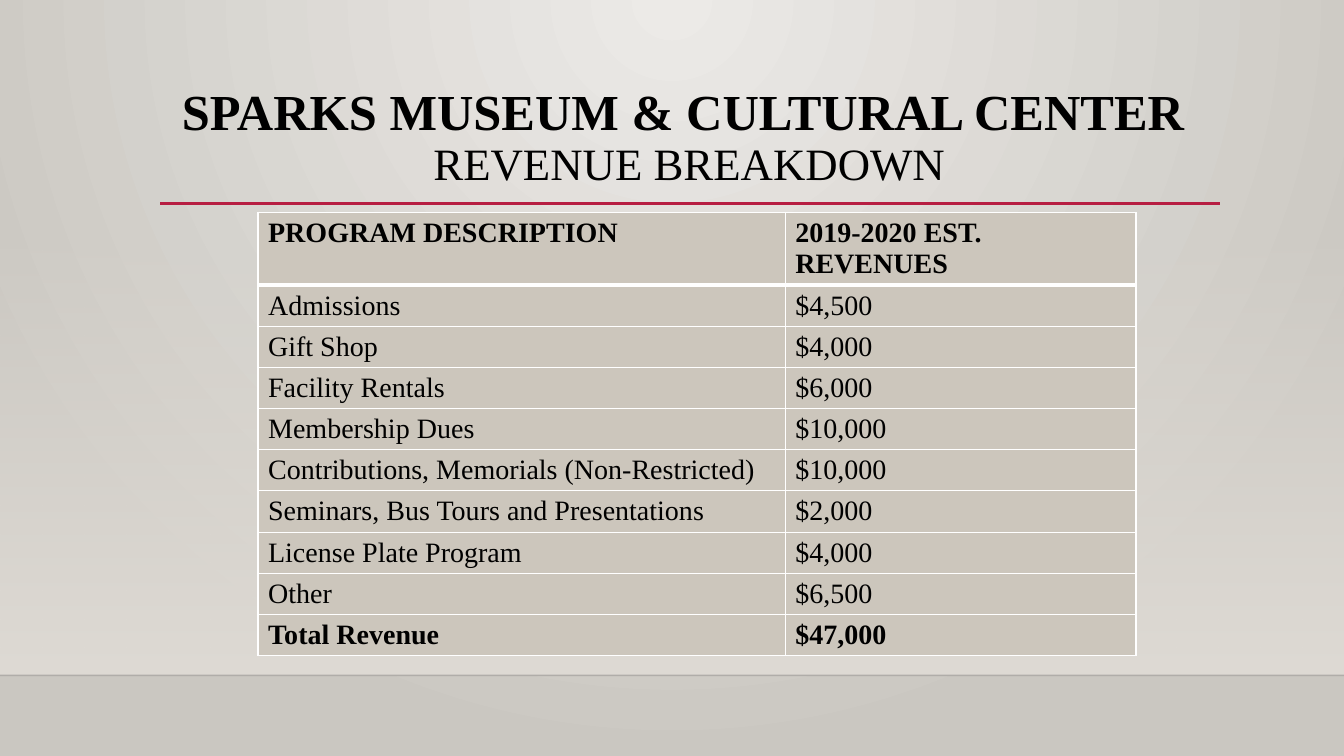
"""Builds the revenue breakdown slide of the museum and cultural center."""
import lxml.etree
import pptx
import pptx.dml.color
import pptx.enum.shapes
import pptx.enum.text
import pptx.oxml.ns
import pptx.util

Pt = pptx.util.Pt
RGBColor = pptx.dml.color.RGBColor
qn = pptx.oxml.ns.qn

BLACK = RGBColor(0x00, 0x00, 0x00)
WHITE = RGBColor(0xFF, 0xFF, 0xFF)
CRIMSON = RGBColor(0xB7, 0x1E, 0x42)
EDGE = RGBColor(0x00, 0x00, 0x01)
GLOW = RGBColor(0xEC, 0xEA, 0xE7)
STONE = RGBColor(0xCA, 0xC7, 0xC1)
HAZE = RGBColor(0xDF, 0xDB, 0xD5)
CELL = RGBColor(0xCC, 0xC6, 0xBC)
FONT = "Times New Roman"
SLIDE_WIDTH, SLIDE_HEIGHT = Pt(960), Pt(540)
FLOOR_TOP = Pt(482.4)
COLUMN_WIDTHS = (Pt(376.56), Pt(250.56))
HEADER_HEIGHT, ROW_HEIGHT = Pt(51.4), Pt(29.4)

REVENUES = (
    ("PROGRAM DESCRIPTION", "2019-2020 EST. REVENUES"),
    ("Admissions", "$4,500"),
    ("Gift Shop", "$4,000"),
    ("Facility Rentals", "$6,000"),
    ("Membership Dues", "$10,000"),
    ("Contributions, Memorials (Non-Restricted)", "$10,000"),
    ("Seminars, Bus Tours and Presentations", "$2,000"),
    ("License Plate Program", "$4,000"),
    ("Other", "$6,500"),
    ("Total Revenue", "$47,000"),
)


def add_element(parent, tag, **attributes):
    return lxml.etree.SubElement(parent, qn(tag), attributes)


def set_gradient(fill, start, end):
    fill.gradient()
    for stop, color in zip(fill.gradient_stops, (start, end)):
        stop.color.rgb = color


def set_alpha(properties, percent):
    color = next(properties.iter(qn("a:srgbClr")))
    add_element(color, "a:alpha", val=str(percent * 1000))


def paint_background(page):
    set_gradient(page.background.fill, GLOW, STONE)
    gradient = next(page.element.iter(qn("a:gradFill")))
    gradient.remove(gradient.find(qn("a:lin")))
    circle = add_element(gradient, "a:path", path="circle")
    add_element(circle, "a:fillToRect", l="43000", t="0", r="43000", b="100000")


def add_haze(page):
    top = Pt(159.12)
    haze = page.shapes.add_shape(
        pptx.enum.shapes.MSO_SHAPE.RECTANGLE, 0, top, SLIDE_WIDTH, FLOOR_TOP - top)
    haze.shadow.inherit = False
    haze.line.fill.background()
    set_gradient(haze.fill, HAZE, HAZE)
    haze.fill.gradient_angle = 270
    set_alpha(haze.element.spPr, 0)


def add_rule(page, left, right, y, color, width):
    rule = page.shapes.add_connector(
        pptx.enum.shapes.MSO_CONNECTOR.STRAIGHT, left, y, right, y)
    rule.line.color.rgb = color
    rule.line.width = width
    add_element(rule.element.spPr, "a:effectLst")
    return rule


def fill_title(page):
    title = page.shapes.title
    title.left, title.top, title.width, title.height = (
        Pt(114.48), Pt(51.84), Pt(756), Pt(94.32))
    frame = title.text_frame
    frame.word_wrap = True
    frame.auto_size = pptx.enum.text.MSO_AUTO_SIZE.NONE
    frame.vertical_anchor = pptx.enum.text.MSO_ANCHOR.MIDDLE
    para = frame.paragraphs[0]
    para.alignment = pptx.enum.text.PP_ALIGN.CENTER
    para.line_spacing = 0.9
    para.font.name = FONT
    para.font.color.rgb = BLACK
    para.font.size = Pt(36)
    heading = para.add_run()
    heading.text = "SPARKS MUSEUM & CULTURAL CENTER "
    heading.font.size = Pt(36)
    heading.font.bold = True
    para.add_line_break()
    subject = para.add_run()
    subject.text = "REVENUE BREAKDOWN"
    subject.font.size = Pt(32)
    subject.font.bold = False


def add_border(cell, side, width):
    border = add_element(
        cell._tc.get_or_add_tcPr(), "a:" + side, w=str(int(width)))
    fill = add_element(border, "a:solidFill")
    add_element(fill, "a:srgbClr", val=str(WHITE))


def fill_cell(cell, text, row, bold):
    widths = {"lnL": Pt(1), "lnR": Pt(1),
              "lnT": Pt(3 if row == 1 else 1), "lnB": Pt(3 if row == 0 else 1)}
    for side, width in widths.items():
        add_border(cell, side, width)
    cell.fill.solid()
    cell.fill.fore_color.rgb = CELL
    cell.text = text
    font = cell.text_frame.paragraphs[0].font
    font.name = FONT
    font.size = Pt(20)
    font.bold = bold
    font.color.rgb = BLACK


def add_revenue_table(page):
    count = len(REVENUES)
    table = page.shapes.add_table(
        count, len(COLUMN_WIDTHS), Pt(184.32), Pt(151.92), sum(COLUMN_WIDTHS),
        HEADER_HEIGHT + ROW_HEIGHT * (count - 1)).table
    table.first_row = False
    table.horz_banding = False
    for column, width in zip(table.columns, COLUMN_WIDTHS):
        column.width = width
    for row, texts in enumerate(REVENUES):
        table.rows[row].height = HEADER_HEIGHT if row == 0 else ROW_HEIGHT
        for column, text in enumerate(texts):
            fill_cell(table.cell(row, column), text, row, row in (0, count - 1))


def main():
    deck = pptx.Presentation()
    deck.slide_width, deck.slide_height = SLIDE_WIDTH, SLIDE_HEIGHT
    page = deck.slides.add_slide(deck.slide_layouts.get_by_name("Title Only"))
    paint_background(page)
    add_haze(page)
    floor_edge = add_rule(page, 0, SLIDE_WIDTH, FLOOR_TOP, EDGE, Pt(1))
    set_alpha(floor_edge.element.spPr, 20)
    add_rule(page, Pt(114.48), Pt(871.2), Pt(145.44), CRIMSON, Pt(2.5))
    fill_title(page)
    add_revenue_table(page)
    deck.save("out.pptx")


if __name__ == "__main__":
    main()
